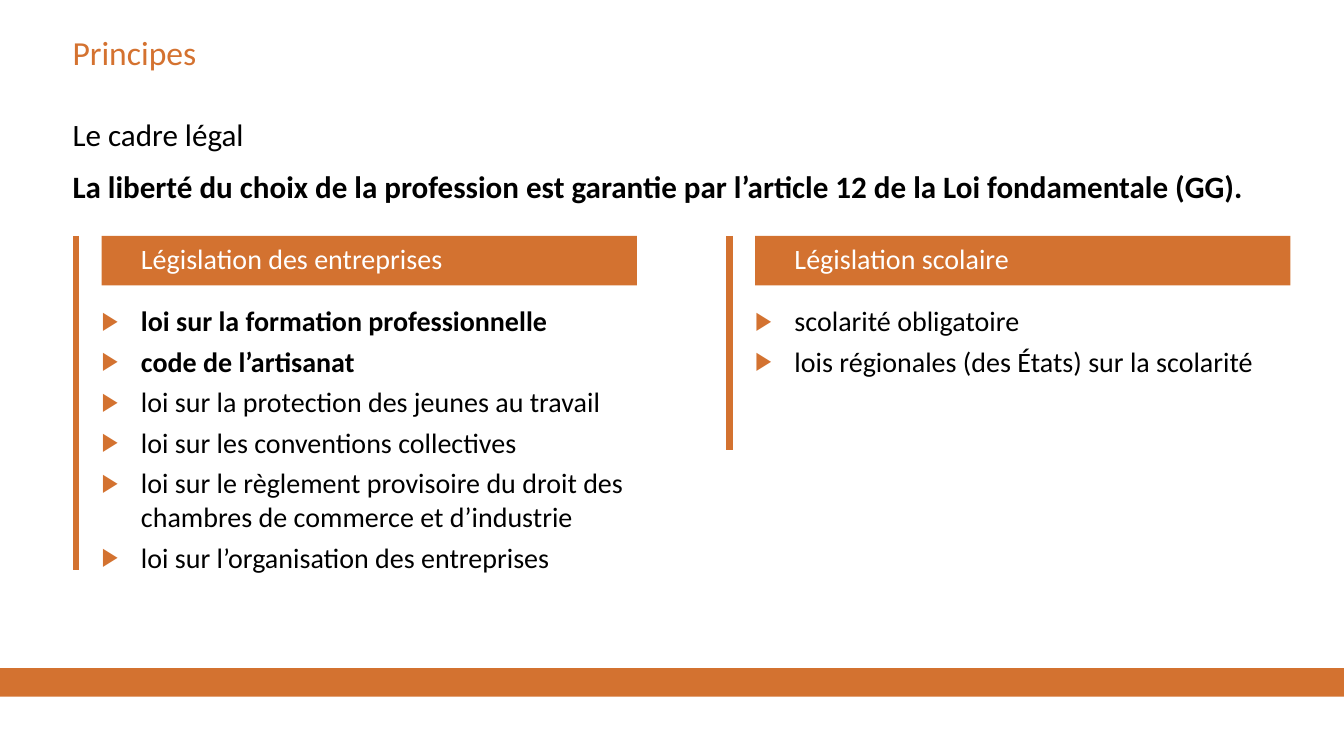
"""Build the slide on the legal framework of vocational training."""
from lxml import etree
from pptx import Presentation
from pptx.dml.color import RGBColor
from pptx.enum.shapes import MSO_CONNECTOR as Connector, MSO_SHAPE as Shape
from pptx.enum.text import MSO_ANCHOR as Anchor, MSO_AUTO_SIZE as AutoSize, PP_ALIGN as Align
from pptx.oxml.ns import qn
from pptx.util import Pt

ORANGE, TITLE_ORANGE, BLACK, WHITE = "D37230", "D47230", "000000", "FFFFFF"
FONT = "Calibri"
TITLE = "Principes"
INTRO = [
    ("Le cadre légal", False),
    ("La liberté du choix de la profession est garantie par l’article 12 "
     "de la Loi fondamentale (GG).", True),
]
COLUMNS = [
    {"heading": "Législation des entreprises", "rule": 238.3, "laws": [
        ("loi sur la formation professionnelle", True),
        ("code de l’artisanat", True),
        ("loi sur la protection des jeunes au travail", False),
        ("loi sur les conventions collectives", False),
        ("loi sur le règlement provisoire du droit des chambres de commerce et d’industrie", False),
        ("loi sur l’organisation des entreprises", False),
    ]},
    {"heading": "Législation scolaire", "rule": 152.6, "laws": [
        ("scolarité obligatoire", False),
        ("lois régionales (des États) sur la scolarité", False),
    ]},
]
WIDTH, HEIGHT = 960, 540
MARGIN = 51.8
COLUMN_LEFT, COLUMN_STEP, COLUMN_WIDTH = 72.6, 466.8, 382.4
COLUMN_TOP, HEADING_HEIGHT = 168.5, 35.3
LIST_TOP, LIST_HEIGHT = 216.8, 206
RULE_GAP, INDENT = 18.3, 28.1


def color(value):
    return RGBColor.from_string(value)


def paint(shape, value):
    shape.fill.solid()
    shape.fill.fore_color.rgb = color(value)


def place(shape, left, top, width, height):
    shape.left, shape.top, shape.width, shape.height = map(Pt, (left, top, width, height))


def add_bullet(para):
    props = para._p.get_or_add_pPr()
    props.set("marL", str(Pt(INDENT)))
    props.set("indent", str(-Pt(INDENT)))
    tint = etree.SubElement(props, qn("a:buClr"))
    etree.SubElement(tint, qn("a:srgbClr"), val=ORANGE)
    etree.SubElement(props, qn("a:buSzPct"), val="90000")
    etree.SubElement(props, qn("a:buFont"), typeface="Arial")
    etree.SubElement(props, qn("a:buChar"), char="▶")


def write(box, lines, size, ink, gap=0, spacing=1.0, inset=0, anchor=Anchor.TOP, bullets=False):
    frame = box.text_frame
    frame.word_wrap = True
    frame.auto_size = AutoSize.NONE
    frame.vertical_anchor = anchor
    frame.margin_left = Pt(inset)
    frame.margin_top = frame.margin_right = frame.margin_bottom = 0
    for index, (text, bold) in enumerate(lines):
        para = frame.add_paragraph() if index else frame.paragraphs[0]
        para.alignment = Align.LEFT
        para.line_spacing = spacing
        para.space_before = Pt(gap if index else 0)
        if bullets:
            add_bullet(para)
        span = para.add_run()
        span.text = text
        span.font.name = FONT
        span.font.size = Pt(size)
        span.font.bold = bold
        span.font.color.rgb = color(ink)


def add_rule(page, x, top, length):
    rule = page.shapes.add_connector(Connector.STRAIGHT, Pt(x), Pt(top), Pt(x), Pt(top + length))
    rule.line.color.rgb = color(ORANGE)
    rule.line.width = Pt(4.5)
    etree.SubElement(rule._element.spPr, qn("a:effectLst"))


def main():
    deck = Presentation()
    deck.slide_width, deck.slide_height = Pt(WIDTH), Pt(HEIGHT)
    page = deck.slides.add_slide(deck.slide_layouts.get_by_name("Comparison"))

    band = page.shapes.add_shape(Shape.RECTANGLE, 0, Pt(477.3), Pt(WIDTH), Pt(20.3))
    band.shadow.inherit = False
    paint(band, ORANGE)
    band.line.fill.background()

    title = page.shapes.title
    place(title, MARGIN, 23, 708.5, 35.3)
    write(title, [(TITLE, False)], 24, TITLE_ORANGE)

    intro = page.shapes.add_textbox(Pt(MARGIN), Pt(82.8), Pt(870.5), Pt(79.2))
    write(intro, INTRO, 22.2, BLACK, gap=10)

    for index, column in enumerate(COLUMNS):
        left = COLUMN_LEFT + index * COLUMN_STEP
        heading = page.placeholders[1 + 2 * index]
        place(heading, left, COLUMN_TOP, COLUMN_WIDTH, HEADING_HEIGHT)
        paint(heading, ORANGE)
        write(heading, [(column["heading"], False)], 20, WHITE,
              spacing=0.9, inset=INDENT, anchor=Anchor.MIDDLE)
        laws = page.placeholders[2 + 2 * index]
        place(laws, left, LIST_TOP, COLUMN_WIDTH, LIST_HEIGHT)
        write(laws, column["laws"], 20, BLACK, gap=5, bullets=True)
        add_rule(page, left - RULE_GAP, COLUMN_TOP, column["rule"])

    deck.save("out.pptx")


if __name__ == "__main__":
    main()
